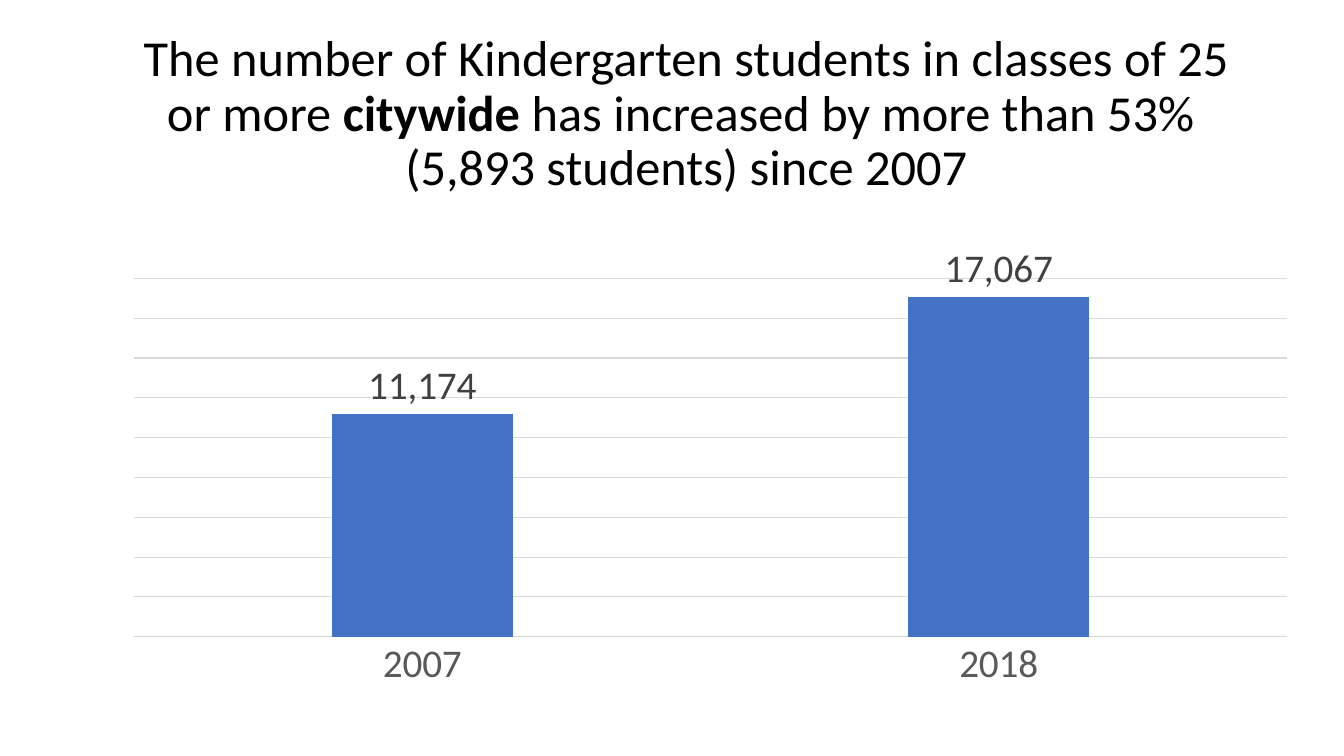
from lxml import etree
from pptx import Presentation
from pptx import util as u
from pptx.chart.data import CategoryChartData
from pptx.dml.color import RGBColor
from pptx.enum import chart as ch, text
from pptx.oxml import ns

PX = 12192000 / 1344


def box(*sides):
    return [u.Emu(round(side * PX)) for side in sides]


def style(font, size, color):
    font.name = "Calibri"
    font.size = u.Pt(size)
    font.color.rgb = RGBColor.from_string(color)


deck = Presentation()
deck.slide_width, deck.slide_height = box(1344, 756)
slide = deck.slides.add_slide(deck.slide_layouts[6])

# Title
frame = slide.shapes.add_textbox(*box(107, 42, 1159, 146)).text_frame
frame.word_wrap = True
frame.vertical_anchor = text.MSO_ANCHOR.MIDDLE
title = frame.paragraphs[0]
title.alignment = text.PP_ALIGN.CENTER
title.line_spacing = 0.9
style(title.font, 36, "000000")
title.add_run().text = "The number of Kindergarten students in classes of 25 or more"
word = title.add_run()
word.text = " citywide "
word.font.bold = True
title.add_run().text = "has increased by more than 53% "
title.add_line_break()
title.add_run().text = "(5,893 students) since 2007"

# Column chart
data = CategoryChartData(number_format="#,##0")
data.categories = ["2007", "2018"]
data.add_series("Series 1", [11174, 17067])
chart = slide.shapes.add_chart(
    ch.XL_CHART_TYPE.COLUMN_CLUSTERED, *box(59, 217, 1253, 512), data).chart
style(chart.font, 10, "000000")
chart.has_legend = False
chart.has_title = False

# Columns and their labels
plot = chart.plots[0]
plot.vary_by_categories = False
plot.gap_width = 219
plot.overlap = -27
bars = plot.series[0]
bars.format.fill.solid()
bars.format.fill.fore_color.rgb = RGBColor.from_string("4472C4")
tags = bars.data_labels
tags.show_value = True
tags.position = ch.XL_LABEL_POSITION.OUTSIDE_END
tags.number_format = "#,##0"
tags.number_format_is_linked = False
style(tags.font, 28, "404040")

# Axes and gridlines
years = chart.category_axis
years.major_tick_mark = ch.XL_TICK_MARK.NONE
style(years.tick_labels.font, 28, "595959")
count = chart.value_axis
count.visible = False
count.minimum_scale = 0
count.maximum_scale = 18000
count.major_unit = 2000
count.has_major_gridlines = True
for line in (years.format.line, count.major_gridlines.format.line):
    line.color.rgb = RGBColor.from_string("D9D9D9")
    line.width = u.Pt(0.75)

# Plot area within the chart
area = plot._element.getparent()
for old in area.findall(ns.qn("c:layout")):
    area.remove(old)
layout = etree.Element(ns.qn("c:layout"))
area.insert(0, layout)
manual = etree.SubElement(layout, ns.qn("c:manualLayout"))
for tag, val in [("layoutTarget", "inner"), ("xMode", "edge"), ("yMode", "edge"),
                 ("x", 0.06), ("y", 0.12), ("w", 0.92), ("h", 0.7)]:
    etree.SubElement(manual, ns.qn("c:" + tag)).set("val", str(val))

deck.save("out.pptx")
